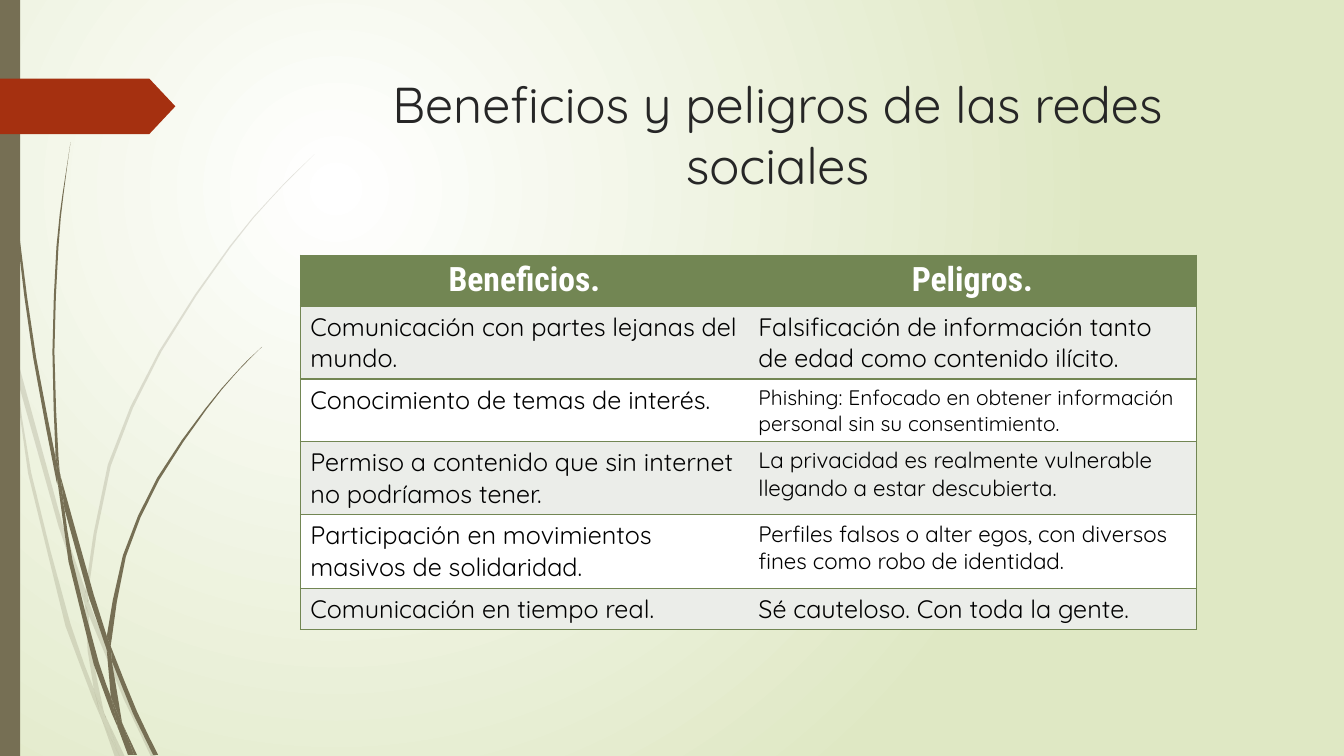
from dataclasses import dataclass

from lxml import etree
from pptx import Presentation
from pptx.dml.color import RGBColor
from pptx.enum.shapes import MSO_SHAPE
from pptx.enum.text import MSO_ANCHOR, PP_ALIGN
from pptx.oxml.ns import qn
from pptx.util import Cm, Pt

RECT = MSO_SHAPE.RECTANGLE
ARROW = MSO_SHAPE.PENTAGON
TOP = MSO_ANCHOR.TOP
CENTER = PP_ALIGN.CENTER
LEFT = PP_ALIGN.LEFT


@dataclass(frozen=True)
class Theme:
    """Colours, fonts and type sizes of the slide."""
    light: str = "FFFFFF"
    meadow: str = "DFE8C4"
    stem: str = "766F54"
    arrow: str = "A53010"
    title: str = "262626"
    text: str = "000000"
    green: str = "728653"
    band: str = "EBEDE9"
    body_font: str = "Quicksand"
    head_font: str = "Roboto Condensed"
    title_size: int = 36
    head_size: int = 24
    body_size: int = 18


T = Theme()
CM_PER_UNIT = 2.54

PALE_BLADES = [
    ([(0, 2.82), (.09, 3.22), (.11, 3.5)], [(.1, 3.44), (0, 2.99)]),
    ([(.14, 3.45), (.62, 5.2), (.85, 5.86)], [(.84, 5.99), (.58, 5.22), (.17, 3.76)]),
    ([(.88, 5.96), (.92, 6.07), (1.27, 6.92), (1.55, 7.51)], [(1.5, 7.51), (1.23, 6.94), (.88, 6.1)]),
    ([(1.05, 7.11), (1.24, 7.51)], [(1.19, 7.51)]),
    ([(.11, 3.5), (.17, 3.76), (.31, 4.69), (.7, 6.19), (.93, 6.83), (.99, 7.07), (1.01, 7.14)],
     [(.92, 6.93), (.65, 6.21), (.28, 4.7)]),
    ([(.84, 5.99), (.88, 6.1), (.91, 6.46), (1.03, 7.06), (1.05, 7.11)],
     [(.96, 6.92), (.93, 6.83), (.87, 6.46)]),
    ([(3.12, 1.53), (2.9, 1.75), (2.68, 1.98), (2.29, 2.45), (1.6, 3.49), (1.1, 4.62), (.88, 5.84), (.88, 5.96)],
     [(.85, 5.86), (.85, 5.84), (1.07, 4.61), (1.58, 3.48), (2.28, 2.44), (2.68, 1.97), (2.89, 1.75)]),
    ([(1.01, 7.14), (1.19, 7.51)], [(1.14, 7.51)]),
    ([(.85, 5.86), (.88, 5.96), (.88, 6.1)], [(.84, 5.99)]),
    ([(.93, 6.83), (.96, 6.92), (1.05, 7.11), (1.19, 7.51)], [(1.01, 7.14), (.99, 7.07)]),
]
DARK_BLADES = [
    ([(.04, 0), (.05, .48), (.08, 1.09), (.19, 2.32), (.36, 3.55), (.55, 4.53), (.57, 4.81)],
     [(.56, 4.77), (.33, 3.55), (.17, 2.33), (.07, 1.1), (.04, .48), (.03, 0)]),
    ([(.6, 4.72), (.93, 5.9), (1.06, 6.31), (1.06, 6.45)], [(.88, 5.92), (.64, 5.05)]),
    ([(1.1, 6.41), (1.13, 6.49), (1.36, 7.06), (1.57, 7.49)], [(1.52, 7.49), (1.32, 7.08), (1.11, 6.56)]),
    ([(.57, 4.77), (.64, 5.05), (.72, 5.56), (.98, 6.57), (1.1, 6.91), (1.17, 7.22)],
     [(1.11, 7.08), (.93, 6.59), (.68, 5.57)]),
    ([(.7, 1.41), (.63, 1.93), (.58, 2.45), (.54, 3.49), (.58, 4.53), (.6, 4.72)],
     [(.55, 4.49), (.52, 3.49), (.56, 2.45), (.62, 1.93)]),
    ([(1.22, 7.19), (1.36, 7.49)], [(1.33, 7.49)]),
    ([(.55, 4.49), (.6, 4.72), (.64, 5.05)], [(.57, 4.77), (.55, 4.53)]),
    ([(2.6, 3.44), (2.45, 3.59), (2.31, 3.74), (2.05, 4.06), (1.58, 4.76), (1.25, 5.52), (1.11, 6.33), (1.1, 6.41)],
     [(1.06, 6.31), (1.22, 5.51), (1.56, 4.74), (2.04, 4.05), (2.31, 3.73), (2.45, 3.58)]),
    ([(1.17, 7.22), (1.31, 7.49)], [(1.27, 7.49)]),
    ([(1.06, 6.45), (1.09, 6.51), (1.11, 6.56), (1.21, 7.16), (1.22, 7.19)], [(1.16, 7.06), (1.1, 6.91)]),
    ([(1.06, 6.31), (1.1, 6.41), (1.11, 6.56)], [(1.06, 6.45)]),
    ([(1.1, 6.91), (1.16, 7.06), (1.22, 7.19), (1.33, 7.49)], [(1.3, 7.49), (1.17, 7.22), (1.16, 7.17)]),
]
HEADERS = ("Beneficios.", "Peligros.")
ROWS = [
    ("Comunicación con partes lejanas del mundo.",
     "Falsificación de información tanto de edad como contenido ilícito.", 18),
    ("Conocimiento de temas de interés.",
     "Phishing: Enfocado en obtener información personal sin su consentimiento.", 15),
    ("Permiso a contenido que sin internet no podríamos tener.",
     "La privacidad es realmente vulnerable llegando a estar descubierta.", 16),
    ("Participación en movimientos masivos de solidaridad.",
     "Perfiles falsos o alter egos, con diversos fines como robo de identidad.", 16),
    ("Comunicación en tiempo real.", "Sé cauteloso. Con toda la gente.", 18),
]
ROW_HEIGHTS = (1.28, 1.84, 1.57, 1.85, 1.85, 1.05)


def rgb(color):
    """Turn a hex string into a colour."""
    return RGBColor.from_string(color)


def paint(sp, color, alpha=None):
    """Give a shape a flat fill without line or shadow."""
    sp.shadow.inherit = False
    sp.fill.solid()
    sp.fill.fore_color.rgb = rgb(color)
    sp.line.fill.background()
    if alpha is not None:
        clr = sp._element.spPr.find(qn("a:solidFill"))[0]
        etree.SubElement(clr, qn("a:alpha"), val=str(alpha * 1000))


def write(tf, text, size, font, color, align=LEFT, bold=False):
    """Write one formatted paragraph into a text frame."""
    tf.text = text
    p = tf.paragraphs[0]
    p.alignment = align
    r = p.runs[0]
    r.font.size, r.font.name, r.font.bold = Pt(size), font, bold
    r.font.color.rgb = rgb(color)


def set_background(s):
    """Fill the background with a circular gradient."""
    fill = s.background.fill
    fill.gradient()
    for stop, color in zip(fill.gradient_stops, (T.light, T.meadow)):
        stop.color.rgb = rgb(color)
    grad = s._element.cSld.find(".//" + qn("a:gradFill"))
    grad.remove(grad.find(qn("a:lin")))
    circle = etree.SubElement(grad, qn("a:path"), path="circle")
    etree.SubElement(circle, qn("a:fillToRect"), l="50000", t="50000", r="100000", b="100000")


def smooth(edge):
    """Add a spline midpoint between the points of a long edge."""
    if len(edge) < 4:
        return edge
    padded = [edge[0], *edge, edge[-1]]
    curve = []
    for quad in zip(padded, padded[1:], padded[2:], padded[3:]):
        middle = tuple((9 * (b + c) - a - d) / 16 for a, b, c, d in zip(*quad))
        curve += [quad[1], middle]
    return curve + [edge[-1]]


def add_grass(s, blades, alpha=None):
    """Draw a group of blades, each from its two edges."""
    group = s.shapes.add_group_shape()
    for down, up in blades:
        outline = [(Cm(x * CM_PER_UNIT), Cm(y * CM_PER_UNIT)) for x, y in smooth(down) + smooth(up)]
        builder = group.shapes.build_freeform(*outline[0])
        builder.add_line_segments(outline[1:])
        paint(builder.convert_to_shape(), T.stem, alpha)


def add_block(s, kind, x, y, w, h, color):
    """Add a flat preset shape."""
    sp = s.shapes.add_shape(kind, Cm(x), Cm(y), Cm(w), Cm(h))
    paint(sp, color)
    return sp


def add_title(s, text):
    """Add the centred slide title."""
    tf = s.shapes.add_textbox(Cm(7.21), Cm(1.73), Cm(24.77), Cm(3.56)).text_frame
    tf.word_wrap = True
    tf.vertical_anchor = TOP
    write(tf, text, T.title_size, T.body_font, T.title, CENTER)


def style_cell(cell, fill, outer):
    """Fill a cell and rule its outer side, top and bottom."""
    tcPr = cell._tc.get_or_add_tcPr()
    for side in ("lnL", "lnR", "lnT", "lnB"):
        ln = etree.SubElement(tcPr, qn("a:" + side), w=str(Pt(1)))
        if side in (outer, "lnT", "lnB"):
            solid = etree.SubElement(ln, qn("a:solidFill"))
            etree.SubElement(solid, qn("a:srgbClr"), val=T.green)
        else:
            etree.SubElement(ln, qn("a:noFill"))
    cell.fill.solid()
    cell.fill.fore_color.rgb = rgb(fill)


def add_comparison(s):
    """Add the table of benefits and dangers."""
    table = s.shapes.add_table(len(ROW_HEIGHTS), 2, Cm(7.57), Cm(6.43), Cm(22.58), Cm(sum(ROW_HEIGHTS))).table
    for i, height in enumerate(ROW_HEIGHTS):
        table.rows[i].height = Cm(height)
        for j, outer in enumerate(("lnL", "lnR")):
            cell = table.cell(i, j)
            if i == 0:
                style_cell(cell, T.green, outer)
                write(cell.text_frame, HEADERS[j], T.head_size, T.head_font, T.light, CENTER, True)
            else:
                style_cell(cell, T.band if i % 2 else T.light, outer)
                size = ROWS[i - 1][2] if j else T.body_size
                write(cell.text_frame, ROWS[i - 1][j], size, T.body_font, T.text)


def main():
    """Build and save the slide."""
    prs = Presentation()
    prs.slide_width, prs.slide_height = Cm(33.87), Cm(19.05)
    s = prs.slides.add_slide(prs.slide_layouts[6])
    set_background(s)
    add_grass(s, PALE_BLADES, 20)
    add_grass(s, DARK_BLADES)
    add_block(s, RECT, 0, 0, .51, 19.05, T.stem)
    add_block(s, ARROW, 0, 1.98, 4.42, 1.4, T.arrow).adjustments[0] = .47
    add_title(s, "Beneficios y peligros de las redes sociales")
    add_comparison(s)
    prs.save("out.pptx")


if __name__ == "__main__":
    main()
